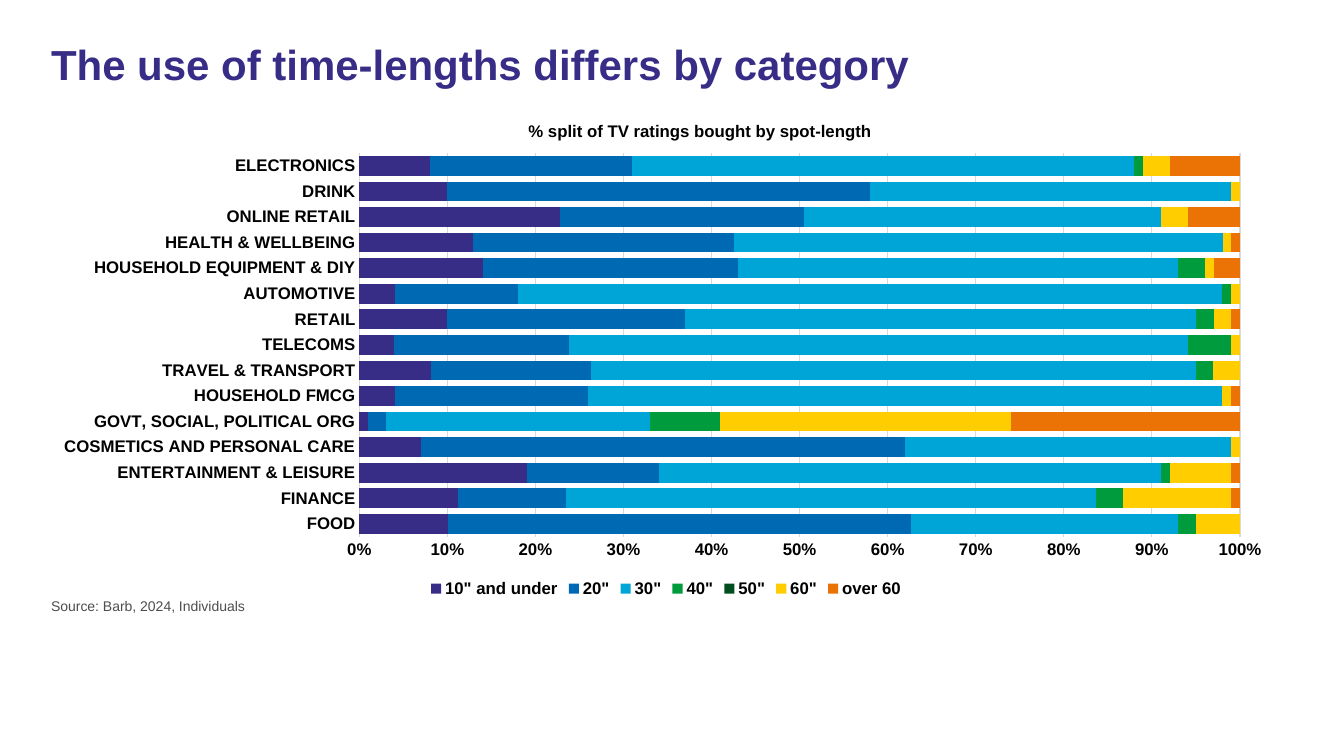
from lxml import etree
from pptx import Presentation
from pptx.chart.data import CategoryChartData
from pptx.dml.color import RGBColor
from pptx.enum.chart import XL_CHART_TYPE, XL_LEGEND_POSITION, XL_TICK_MARK
from pptx.enum.text import MSO_ANCHOR, MSO_AUTO_SIZE, PP_ALIGN
from pptx.oxml.ns import qn
from pptx.util import Pt

STACKED = XL_CHART_TYPE.BAR_STACKED_100
BOTTOM = XL_LEGEND_POSITION.BOTTOM
NO_TICK = XL_TICK_MARK.NONE
TOP = MSO_ANCHOR.TOP
FIXED = MSO_AUTO_SIZE.NONE
LEFT = PP_ALIGN.LEFT

PX = 9525
BLACK = RGBColor(0x00, 0x00, 0x00)
GREY = RGBColor(0x4D, 0x4D, 0x4D)
PALE = RGBColor(0xD9, 0xD9, 0xD9)
PURPLE = RGBColor(0x37, 0x2D, 0x87)
BLUE = RGBColor(0x00, 0x69, 0xB4)
CYAN = RGBColor(0x00, 0xA5, 0xD7)
GREEN = RGBColor(0x00, 0x9B, 0x3C)
FOREST = RGBColor(0x00, 0x4E, 0x1E)
YELLOW = RGBColor(0xFF, 0xCD, 0x00)
ORANGE = RGBColor(0xEB, 0x73, 0x05)

LENGTHS = [
    ('10" and under', PURPLE),
    ('20"', BLUE),
    ('30"', CYAN),
    ('40"', GREEN),
    ('50"', FOREST),
    ('60"', YELLOW),
    ("over 60", ORANGE),
]
# One row per category, one value per spot length
SPLITS = {
    "FOOD": (10, 52, 30, 2, 0, 5, 0),
    "FINANCE": (11, 12, 59, 3, 0, 12, 1),
    "ENTERTAINMENT & LEISURE": (19, 15, 57, 1, 0, 7, 1),
    "COSMETICS AND PERSONAL CARE": (7, 55, 37, 0, 0, 1, 0),
    "GOVT, SOCIAL, POLITICAL ORG": (1, 2, 30, 8, 0, 33, 26),
    "HOUSEHOLD FMCG": (4, 22, 72, 0, 0, 1, 1),
    "TRAVEL & TRANSPORT": (8, 18, 68, 2, 0, 3, 0),
    "TELECOMS": (4, 20, 71, 5, 0, 1, 0),
    "RETAIL": (10, 27, 58, 2, 0, 2, 1),
    "AUTOMOTIVE": (4, 14, 80, 1, 0, 1, 0),
    "HOUSEHOLD EQUIPMENT & DIY": (14, 29, 50, 3, 0, 1, 3),
    "HEALTH & WELLBEING": (13, 30, 56, 0, 0, 1, 1),
    "ONLINE RETAIL": (23, 28, 41, 0, 0, 3, 6),
    "DRINK": (10, 48, 41, 0, 0, 1, 0),
    "ELECTRONICS": (8, 23, 57, 1, 0, 3, 8),
}


def place(part, index, **sizes):
    """Give a chart part a manual layout, in fractions of the chart."""
    for old in part.findall(qn("c:layout")):
        part.remove(old)
    layout = etree.Element(qn("c:layout"))
    part.insert(index, layout)
    manual = etree.SubElement(layout, qn("c:manualLayout"))
    if "w" in sizes:
        etree.SubElement(manual, qn("c:layoutTarget"), val="inner")
    for side in "xy":
        etree.SubElement(manual, qn(f"c:{side}Mode"), val="edge")
    for side, size in sizes.items():
        etree.SubElement(manual, qn(f"c:{side}"), val=str(size))


class Page:
    """Holds the style and the current slide."""

    face = "Arial"

    def __init__(self, deck):
        self.slide = deck.slides.add_slide(deck.slide_layouts[1])

    def style(self, font, size, color, bold=False):
        font.name = self.face
        font.size = Pt(size)
        font.bold = bold
        font.color.rgb = color

    def text(self, holder, box, words, size, color, bold=False, line=1.0):
        """Move a placeholder and fill it with one plain paragraph."""
        holder.left, holder.top, holder.width, holder.height = (n * PX for n in box)
        frame = holder.text_frame
        frame.word_wrap = True
        frame.auto_size = FIXED
        frame.vertical_anchor = TOP
        para = frame.paragraphs[0]
        para.text = words
        props = para._p.get_or_add_pPr()
        props.set("marL", "0")
        props.set("indent", "0")
        etree.SubElement(props, qn("a:buNone"))
        para.alignment = LEFT
        para.space_before = Pt(0)
        para.line_spacing = line
        self.style(para.font, size, color, bold)

    def chart(self, box, title):
        data = CategoryChartData(number_format="0")
        data.categories = list(SPLITS)
        for (name, _), vals in zip(LENGTHS, zip(*SPLITS.values())):
            data.add_series(name, vals)
        frame = self.slide.shapes.add_chart(STACKED, *(n * PX for n in box), data)
        frame.element.getparent().insert(2, frame.element)
        chart = frame.chart
        self.style(chart.font, 12, BLACK, True)

        plot = chart.plots[0]
        plot.gap_width = 30
        plot.overlap = 100
        plot.vary_by_categories = False
        for series, (_, color) in zip(plot.series, LENGTHS):
            series.format.fill.solid()
            series.format.fill.fore_color.rgb = color

        cats, vals = chart.category_axis, chart.value_axis
        for axis in (cats, vals):
            axis.major_tick_mark = axis.minor_tick_mark = NO_TICK
            self.style(axis.tick_labels.font, 12, BLACK, True)
        vals.tick_labels.number_format = "0%"
        vals.tick_labels.number_format_is_linked = False
        vals.format.line.fill.background()
        vals.has_major_gridlines = True
        for line in (cats.format.line, vals.major_gridlines.format.line):
            line.color.rgb = PALE
            line.width = Pt(0.75)

        chart.has_title = True
        para = chart.chart_title.text_frame.paragraphs[0]
        para.text = title
        self.style(para.font, 12, BLACK, True)
        chart.has_legend = True
        legend = chart.legend
        legend.position = BOTTOM
        legend.include_in_layout = False
        self.style(legend.font, 12, BLACK, True)

        area = plot._element.getparent()
        place(area, 0, x=0.257, y=0.106, w=0.706, h=0.763)
        place(chart.chart_title._element, 1, x=0.39, y=0.035)
        place(legend._element, 1, x=0.31, y=0.95)


def main():
    deck = Presentation()
    deck.slide_width, deck.slide_height = 1280 * PX, 720 * PX
    page = Page(deck)
    title, body = page.slide.placeholders
    page.text(title, (39, 37, 1190, 108),
              "The use of time-lengths differs by category", 30, PURPLE, True, 0.9)
    page.text(body, (39, 564, 1190, 32), "Source: Barb, 2024, Individuals", 10, GREY)
    page.chart((37, 95, 1188, 479), "% split of TV ratings bought by spot-length")
    deck.save("out.pptx")


if __name__ == "__main__":
    main()
